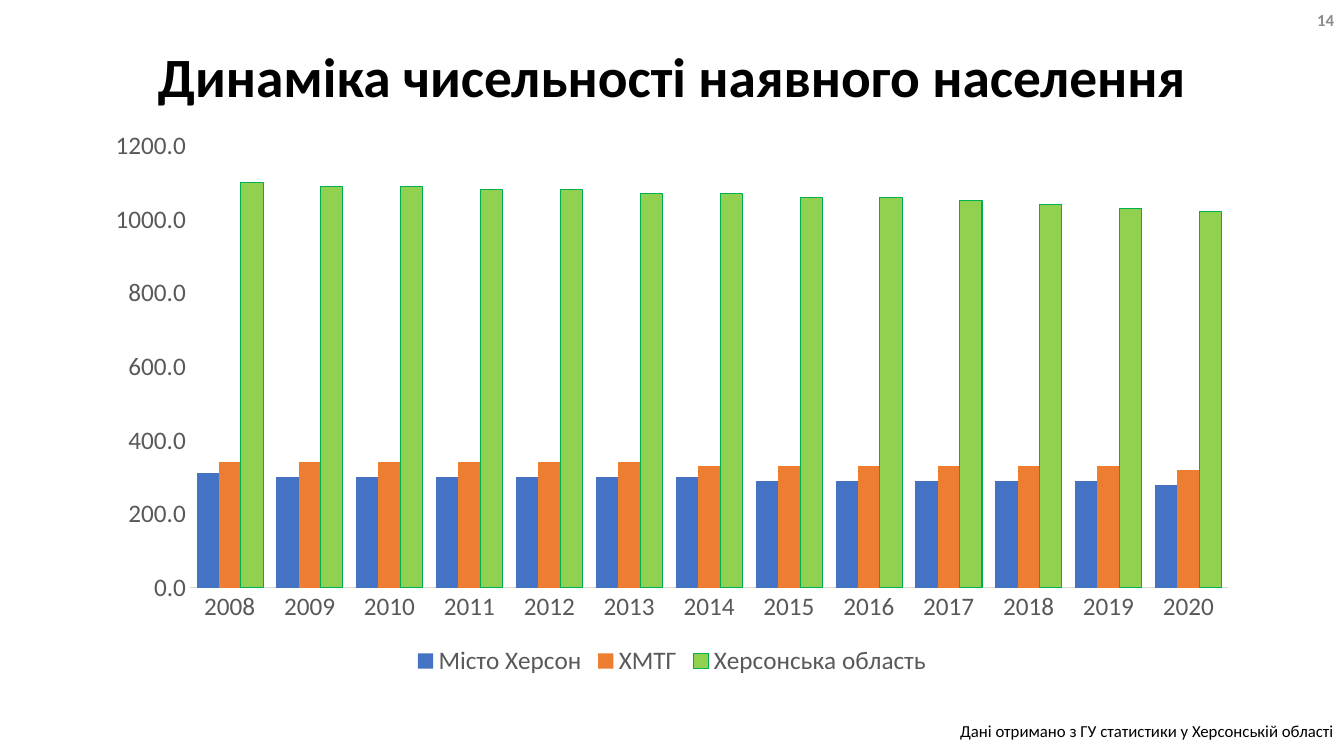
from pptx import Presentation
from pptx.chart.data import CategoryChartData
from pptx.dml.color import RGBColor
from pptx.enum.chart import XL_CHART_TYPE as ChartType
from pptx.enum.chart import XL_LEGEND_POSITION as LegendPosition
from pptx.enum.chart import XL_TICK_MARK as TickMark
from pptx.enum.text import MSO_ANCHOR as Anchor
from pptx.enum.text import PP_ALIGN as Align
from pptx.util import Cm, Pt

# Content
TITLE = "Динаміка чисельності наявного населення"
SOURCE_NOTE = "Дані отримано з ГУ статистики у Херсонській області"
PAGE_NUMBER = "14"
YEARS = [str(year) for year in range(2008, 2021)]
POPULATION = {
    "Місто Херсон": (310, 300, 300, 300, 300, 300, 300, 290, 290, 290, 290, 290, 280),
    "ХМТГ": (340, 340, 340, 340, 340, 340, 330, 330, 330, 330, 330, 330, 320),
    "Херсонська область": (1100, 1090, 1090, 1080, 1080, 1070, 1070,
                           1060, 1060, 1050, 1040, 1030, 1020),
}


class Theme:
    font = "Calibri"
    title_size, chart_size, small_size = 39.6, 18, 12
    black, label, page, axis = "000000", "595959", "8C8C8C", "D9D9D9"
    series = ("4472C4", "ED7D31", "92D050")
    region_outline = "00B050"


# Layout
WIDTH, HEIGHT = Cm(33.87), Cm(19.05)
MARGIN = Cm(2.33)
CONTENT_WIDTH = WIDTH - 2 * MARGIN
TITLE_TOP, TITLE_HEIGHT = Cm(1.02), Cm(1.98)
CHART_TOP, CHART_HEIGHT = TITLE_TOP + TITLE_HEIGHT, Cm(14.17)
NOTE_TOP, NOTE_HEIGHT = Cm(18.03), Cm(0.77)
PAGE_WIDTH, PAGE_HEIGHT = Cm(7.62), Cm(1.01)


def color(value):
    return RGBColor.from_string(value)


def style_font(font, size, value, bold=False):
    font.name, font.size, font.bold = Theme.font, Pt(size), bold
    font.color.rgb = color(value)


def write(shape, text, size=Theme.small_size, fill=Theme.black, bold=False,
          align=Align.RIGHT, anchor=Anchor.TOP, spacing=1.0):
    frame = shape.text_frame
    frame.word_wrap, frame.vertical_anchor = True, anchor
    paragraph = frame.paragraphs[0]
    paragraph.alignment, paragraph.line_spacing = align, spacing
    run = paragraph.add_run()
    run.text = text
    style_font(run.font, size, fill, bold)


def add_population_chart(slide):
    data = CategoryChartData(number_format="0.0")
    data.categories = YEARS
    for name, values in POPULATION.items():
        data.add_series(name, values)
    chart = slide.shapes.add_chart(ChartType.COLUMN_CLUSTERED, MARGIN, CHART_TOP,
                                   CONTENT_WIDTH, CHART_HEIGHT, data).chart
    chart.has_title = False
    style_font(chart.font, Theme.chart_size, Theme.black)

    # Columns
    plot = chart.plots[0]
    plot.gap_width, plot.overlap, plot.vary_by_categories = 60, 0, False
    for series, fill in zip(plot.series, Theme.series):
        series.invert_if_negative = False
        series.format.fill.solid()
        series.format.fill.fore_color.rgb = color(fill)
    region_line = plot.series[-1].format.line
    region_line.color.rgb, region_line.width = color(Theme.region_outline), Pt(0.75)

    # Axes
    for axis in (chart.category_axis, chart.value_axis):
        axis.has_major_gridlines = False
        axis.major_tick_mark = axis.minor_tick_mark = TickMark.NONE
        style_font(axis.tick_labels.font, Theme.chart_size, Theme.label)
    year_line = chart.category_axis.format.line
    year_line.color.rgb, year_line.width = color(Theme.axis), Pt(0.75)
    value_axis = chart.value_axis
    value_axis.format.line.fill.background()
    value_axis.minimum_scale, value_axis.maximum_scale = 0, 1200
    value_axis.major_unit = 200
    value_axis.tick_labels.number_format = "0.0"
    value_axis.tick_labels.number_format_is_linked = False

    # Legend
    chart.has_legend = True
    chart.legend.position = LegendPosition.BOTTOM
    chart.legend.include_in_layout = False
    style_font(chart.legend.font, Theme.chart_size, Theme.label)


def main():
    presentation = Presentation()
    presentation.slide_width, presentation.slide_height = WIDTH, HEIGHT
    slide = presentation.slides.add_slide(presentation.slide_layouts[5])

    # Title
    title = slide.shapes.title
    title.left, title.top = MARGIN, TITLE_TOP
    title.width, title.height = CONTENT_WIDTH, TITLE_HEIGHT
    write(title, TITLE, size=Theme.title_size, bold=True, align=Align.CENTER,
          anchor=Anchor.MIDDLE, spacing=0.9)

    add_population_chart(slide)

    # Source note and page number
    note = slide.shapes.add_textbox(0, NOTE_TOP, WIDTH, NOTE_HEIGHT)
    write(note, SOURCE_NOTE)
    page = slide.shapes.add_textbox(WIDTH - PAGE_WIDTH, 0, PAGE_WIDTH, PAGE_HEIGHT)
    write(page, PAGE_NUMBER, fill=Theme.page, bold=True, anchor=Anchor.MIDDLE)

    presentation.save("out.pptx")


if __name__ == "__main__":
    main()
